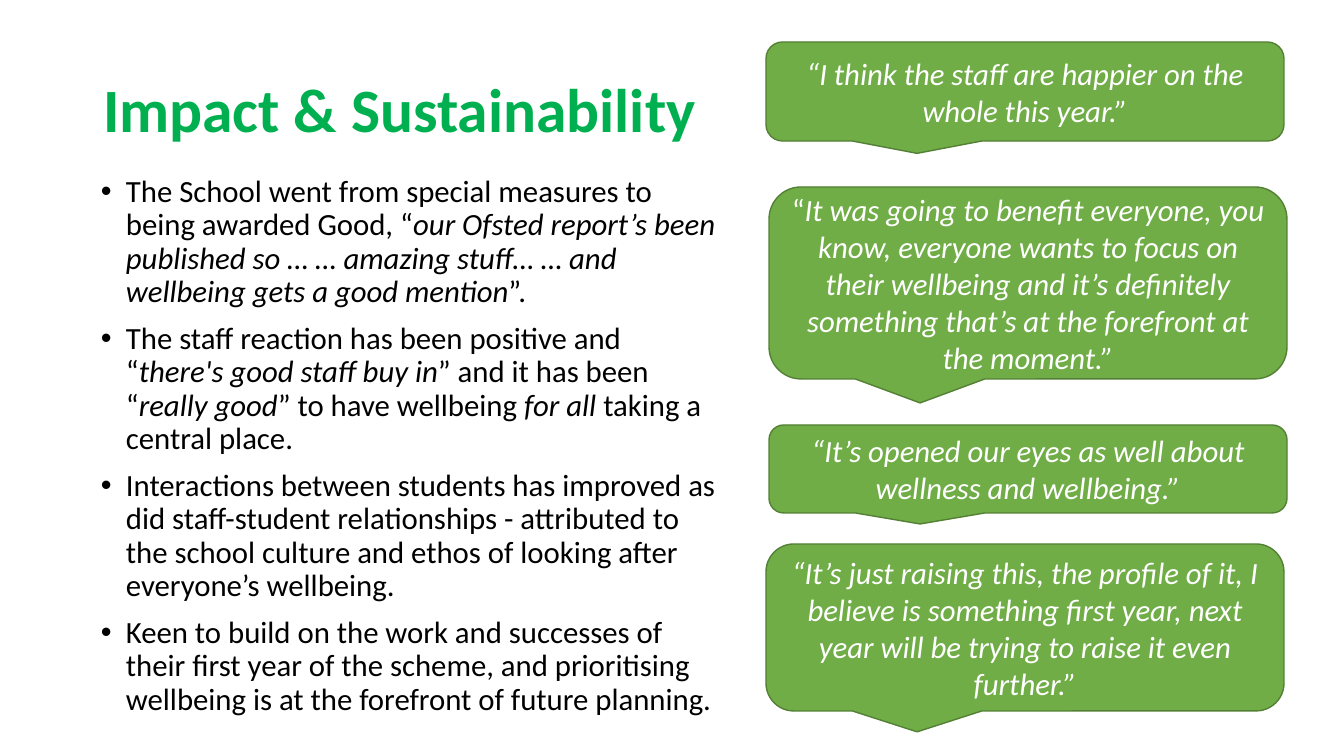
from lxml import etree
from pptx import Presentation
from pptx.dml.color import RGBColor
from pptx.enum.shapes import MSO_SHAPE
from pptx.enum.text import MSO_ANCHOR, MSO_AUTO_SIZE, PP_ALIGN
from pptx.oxml.ns import qn
from pptx.util import Emu, Pt

CALLOUT = MSO_SHAPE.ROUNDED_RECTANGULAR_CALLOUT
MIDDLE = MSO_ANCHOR.MIDDLE
TOP = MSO_ANCHOR.TOP
NO_FIT = MSO_AUTO_SIZE.NONE
LEFT = PP_ALIGN.LEFT
CENTER = PP_ALIGN.CENTER

SCALE = 914400 / 100.8
INDENT = 25
COLORS = {
    "title": "00B050",
    "body": "000000",
    "fill": "70AD47",
    "edge": "538035",
    "quote": "FFFFFF",
}
FONTS = {
    "title": {"name": "Calibri", "size": Pt(44), "bold": True},
    "body": {"name": "Calibri", "size": Pt(22)},
    "quote": {"name": "Calibri", "size": Pt(22)},
}
PARAS = {
    "title": {"alignment": LEFT, "line_spacing": 0.9},
    "body": {"alignment": LEFT, "line_spacing": 0.9, "space_before": Pt(10)},
    "quote": {"alignment": CENTER},
}
FRAMES = {
    "title": {"word_wrap": True, "auto_size": NO_FIT, "vertical_anchor": MIDDLE},
    "body": {"word_wrap": True, "auto_size": NO_FIT, "vertical_anchor": TOP},
    "quote": {"word_wrap": True, "auto_size": NO_FIT, "vertical_anchor": MIDDLE},
}

POINTS = [
    "The School went from special measures to being awarded Good, “*our Ofsted "
    "report’s been published so … … amazing stuff… … and wellbeing gets a good "
    "mention*”.",
    "The staff reaction has been positive and “*there's good staff buy in*” and it "
    "has been “*really good*” to have wellbeing *for all* taking a central place.",
    "Interactions between students has improved as did staff-student relationships "
    "- attributed to the school culture and ethos of looking after everyone’s "
    "wellbeing.",
    "Keen to build on the work and successes of their first year of the scheme, "
    "and prioritising wellbeing is at the forefront of future planning.",
]
QUOTES = [
    (766, 42, 99, "*“I think the staff are happier on the whole this year.”*"),
    (769, 187, 192, "“*It was going to benefit everyone, you know, everyone wants to "
     "focus on their wellbeing and it’s definitely something that’s at the forefront "
     "at the moment.”*"),
    (769, 425, 88, "*“It’s opened our eyes as well about wellness and wellbeing.”*"),
    (766, 544, 167, "*“It’s just raising this, the profile of it, I believe is "
     "something first year, next year will be trying to raise it even further.”*"),
]
QUOTE_WIDTH = 518


def px(count):
    return Emu(round(count * SCALE))


def tint(key):
    return RGBColor.from_string(COLORS[key])


def apply(target, values):
    for name, value in values.items():
        setattr(target, name, value)


def write(frame, lines, kind):
    apply(frame, FRAMES[kind])
    for row, line in enumerate(lines):
        para = frame.add_paragraph() if row else frame.paragraphs[0]
        apply(para, PARAS[kind])
        for part, words in enumerate(line.split("*")):
            if words:
                run = para.add_run()
                run.text = words
                apply(run.font, FONTS[kind])
                run.font.italic = part % 2 == 1
                run.font.color.rgb = tint(kind)


def add_title(slide, text, box):
    title = slide.shapes.title
    apply(title, dict(zip(("left", "top", "width", "height"), map(px, box))))
    write(title.text_frame, [text], "title")


def add_list(slide, lines, box):
    frame = slide.shapes.add_textbox(*map(px, box)).text_frame
    write(frame, lines, "body")
    for para in frame.paragraphs:
        props = para._p.get_or_add_pPr()
        props.set("marL", str(px(INDENT)))
        props.set("indent", str(px(-INDENT)))
        etree.SubElement(props, qn("a:buFont")).set("typeface", "Arial")
        etree.SubElement(props, qn("a:buChar")).set("char", "•")


def add_quote(slide, text, box):
    shape = slide.shapes.add_shape(CALLOUT, *map(px, box))
    shape.shadow.inherit = False
    shape.fill.solid()
    shape.fill.fore_color.rgb = tint("fill")
    shape.line.color.rgb = tint("edge")
    shape.line.width = Pt(1)
    write(shape.text_frame, [text], "quote")


def main():
    deck = Presentation()
    deck.slide_width = px(1344)
    deck.slide_height = px(756)
    slide = deck.slides.add_slide(deck.slide_layouts[5])
    add_title(slide, "Impact & Sustainability", (93, 40, 1159, 146))
    add_list(slide, POINTS, (91, 171, 635, 541))
    for left, top, height, text in QUOTES:
        add_quote(slide, text, (left, top, QUOTE_WIDTH, height))
    deck.save("out.pptx")


if __name__ == "__main__":
    main()
